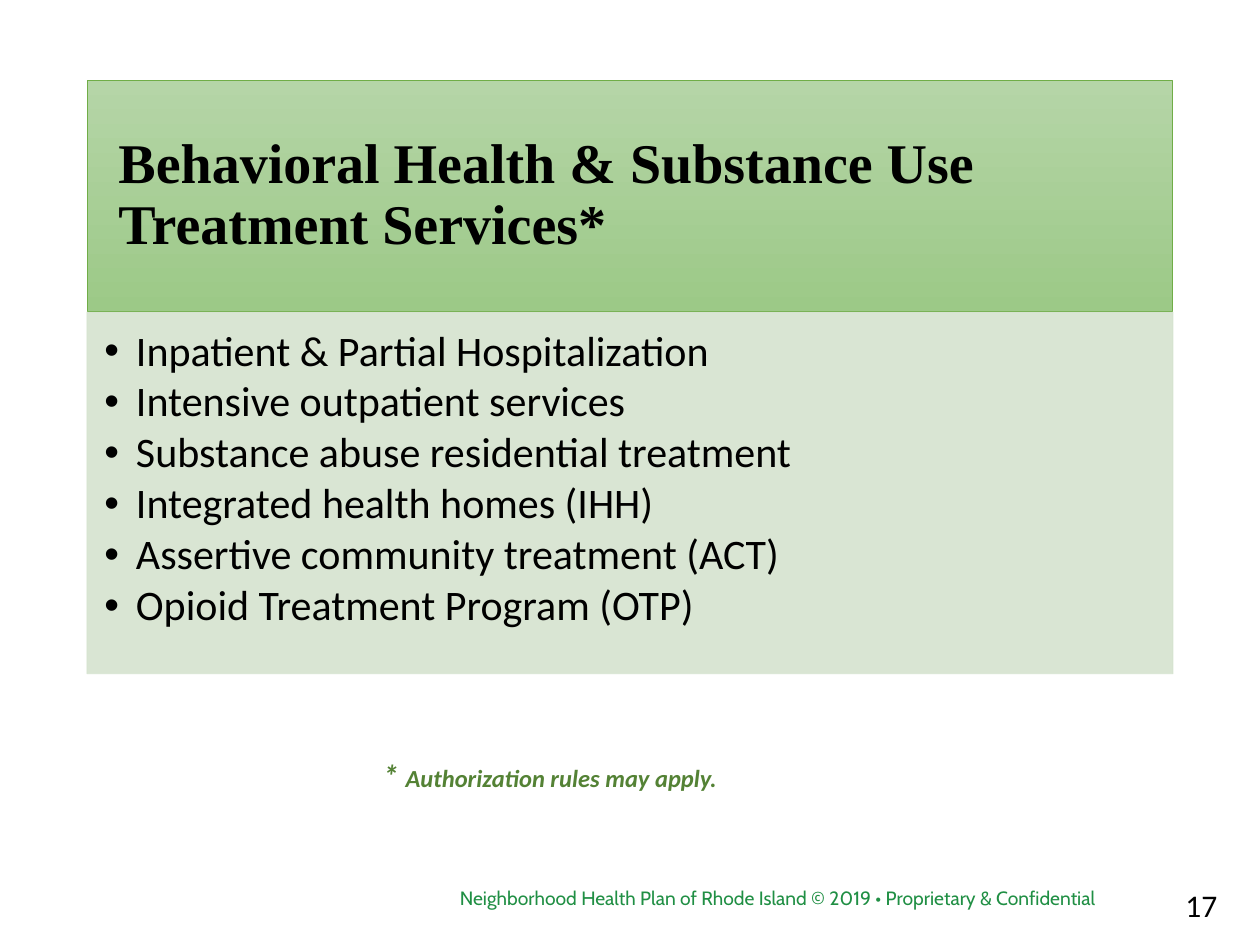
from lxml.etree import SubElement
from pptx import Presentation
from pptx.dml.color import RGBColor
from pptx.enum.text import MSO_ANCHOR as Anchor, MSO_AUTO_SIZE as AutoSize, PP_ALIGN as Align
from pptx.oxml.ns import qn
from pptx.util import Pt

BLACK = RGBColor(0, 0, 0)
HEADER_TOP = RGBColor(0xB5, 0xD5, 0xA7)
HEADER_BOTTOM = RGBColor(0x9C, 0xC9, 0x87)
HEADER_EDGE = RGBColor(0x70, 0xAD, 0x47)
PANEL = RGBColor(0xD5, 0xE3, 0xCF)
NOTE_GREEN = RGBColor(0x54, 0x82, 0x35)
FOOTER_GREEN = RGBColor(0x20, 0x8F, 0x44)

LEFT, WIDTH = 49.7, 620.6
SERVICES = [
    "Inpatient & Partial Hospitalization",
    "Intensive outpatient services",
    "Substance abuse residential treatment",
    "Integrated health homes (IHH)",
    "Assertive community treatment (ACT)",
    "Opioid Treatment Program (OTP)",
]


def place(shape, left, top, width, height):
    shape.left, shape.top = Pt(left), Pt(top)
    shape.width, shape.height = Pt(width), Pt(height)


def set_frame(frame, anchor, left, top, right, bottom):
    frame.auto_size = AutoSize.NONE
    frame.word_wrap = True
    frame.vertical_anchor = anchor
    frame.margin_left, frame.margin_top = Pt(left), Pt(top)
    frame.margin_right, frame.margin_bottom = Pt(right), Pt(bottom)


def set_font(font, name, size, color, bold=False, italic=False):
    font.name, font.size = name, Pt(size)
    font.bold, font.italic = bold, italic
    font.color.rgb = color


def make_translucent(shape, percent):
    """Give the solid fill and the line the same opacity."""
    for color in shape._element.spPr.iter(qn("a:srgbClr")):
        SubElement(color, qn("a:alpha"), val=str(percent * 1000))


def fill_header(title):
    place(title, LEFT, 46.1, WIDTH, 131.8)
    title.fill.gradient()
    title.fill.gradient_angle = 270
    for stop, color, position in zip(title.fill.gradient_stops,
                                     (HEADER_TOP, HEADER_BOTTOM), (0, 1)):
        stop.color.rgb = color
        stop.position = position
    title.line.color.rgb = HEADER_EDGE
    title.line.width = Pt(0.5)
    frame = title.text_frame
    frame.text = "Behavioral Health & Substance Use Treatment Services*"
    set_frame(frame, Anchor.MIDDLE, 18, 10, 18, 10)
    heading = frame.paragraphs[0]
    heading.alignment = Align.LEFT
    heading.line_spacing = 0.9
    set_font(heading.font, "Times New Roman", 32, BLACK, bold=True)


def fill_services(body):
    place(body, LEFT, 178.4, WIDTH, 206.6)
    body.fill.solid()
    body.fill.fore_color.rgb = PANEL
    body.line.color.rgb = PANEL
    body.line.width = Pt(0.5)
    make_translucent(body, 90)
    frame = body.text_frame
    frame.text = "\n".join(SERVICES)
    set_frame(frame, Anchor.TOP, 10, 10, 13.5, 15)
    for service in frame.paragraphs:
        properties = service._p.get_or_add_pPr()
        properties.set("marL", str(Pt(18)))
        properties.set("indent", str(-Pt(18)))
        service.line_spacing = 0.9
        service.space_before = Pt(0)
        service.space_after = Pt(3.2)
        set_font(service.font, "Calibri", 24, BLACK)


def add_text(slide, box, text, wrap=True, align=Align.LEFT):
    """Add a one-paragraph text box and return its paragraph."""
    frame = slide.shapes.add_textbox(*map(Pt, box)).text_frame
    frame.word_wrap = wrap
    paragraph = frame.paragraphs[0]
    paragraph.alignment = align
    paragraph.add_run().text = text
    return paragraph


def main():
    deck = Presentation()
    deck.slide_width, deck.slide_height = Pt(720), Pt(540)
    slide = deck.slides.add_slide(deck.slide_layouts[1])
    fill_header(slide.shapes.title)
    fill_services(slide.placeholders[1])

    footer = add_text(
        slide, (234.7, 502.6, 419.8, 20.9),
        "Neighborhood Health Plan of Rhode Island © 2019 • Proprietary & Confidential",
        align=Align.CENTER)
    set_font(footer.font, "Cabin", 11, FOOTER_GREEN)

    note = add_text(slide, (211.7, 428.4, 458.6, 28.8), "* ")
    set_font(note.font, "Calibri", 18, NOTE_GREEN, bold=True, italic=True)
    rule = note.add_run()
    rule.text = "Authorization rules may apply."
    rule.font.size = Pt(14)

    page_number = add_text(slide, (670.3, 502.6, 33.1, 28.8), "17", wrap=False)
    set_font(page_number.font, "Calibri", 18, BLACK)
    deck.save("out.pptx")


if __name__ == "__main__":
    main()
